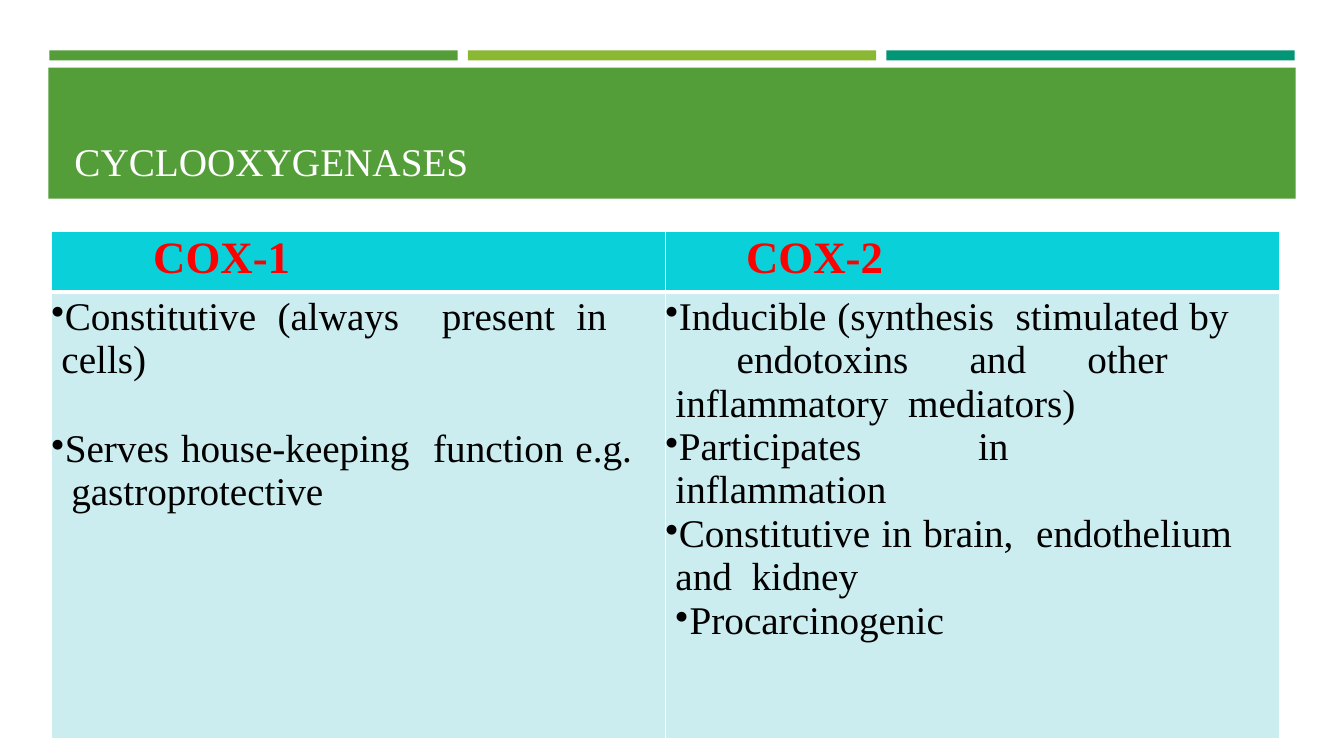
from lxml.etree import SubElement
from pptx import Presentation
from pptx.dml.color import RGBColor
from pptx.enum.shapes import MSO_SHAPE
from pptx.enum.text import MSO_ANCHOR, PP_ALIGN
from pptx.oxml.ns import qn
from pptx.util import Inches, Pt

FONT = "Times New Roman"
GREEN, LIME, TEAL, WHITE = "549E39", "8AB833", "029676", "FFFFFF"


def paint(color_owner, color):
    """Give a fill or a font a solid colour."""
    if hasattr(color_owner, "solid"):
        color_owner.solid()
        color_owner.fore_color.rgb = RGBColor.from_string(color)
    else:
        color_owner.color.rgb = RGBColor.from_string(color)


def style_paragraph(paragraph, text, size, color, bold=False):
    paragraph.text = text
    paragraph.font.name = FONT
    paragraph.font.size = Pt(size)
    paragraph.font.bold = bold
    paint(paragraph.font, color)


presentation = Presentation()
presentation.slide_width = Inches(13.33)
presentation.slide_height = Inches(7.5)
slide = presentation.slides.add_slide(presentation.slide_layouts[6])

# Three thin strips above the title band
bands = [(0.49 + 4.15 * i, 0.5, 4.05, 0.1, color)
         for i, color in enumerate((GREEN, LIME, TEAL))]
bands.append((0.48, 0.67, 12.37, 1.3, GREEN))
for left, top, width, height, color in bands:
    band = slide.shapes.add_shape(
        MSO_SHAPE.RECTANGLE, Inches(left), Inches(top), Inches(width), Inches(height))
    band.shadow.inherit = False
    band.line.fill.background()
    paint(band.fill, color)

title = slide.shapes.add_textbox(
    Inches(0.64), Inches(0.77), Inches(12.06), Inches(1.11)).text_frame
title.word_wrap = True
title.vertical_anchor = MSO_ANCHOR.BOTTOM
style_paragraph(title.paragraphs[0], "CYCLOOXYGENASES", 28, WHITE)

# Heading, its left margin, then points as
# (text, left margin, hanging indent, right margin, space before)
enzymes = [
    ("COX-1", 1.01, [
        ("Constitutive (always  present in cells)", 0.1, -0.1, 0.58, 1.9),
        ("Serves house-keeping  function e.g.  gastroprotective", 0.1, -0.1, 0.33, 32.5),
    ]),
    ("COX-2", 0.8, [
        ("Inducible (synthesis  stimulated by  endotoxins and other  "
         "inflammatory  mediators)", 0.1, -0.1, 0.5, 1.9),
        ("Participates in  inflammation", 0.1, -0.1, 1.53, 0.1),
        ("Constitutive in brain,  endothelium and  kidney", 0.1, -0.1, 0.47, 0.1),
        ("Procarcinogenic", 0.24, -0.14, 0, 0.1),
    ]),
]

comparison = slide.shapes.add_table(
    2, 2, Inches(0.51), Inches(2.3), Inches(12.18), Inches(5.03)).table
comparison.first_row = comparison.horz_banding = False
comparison.rows[0].height = Inches(0.6)
comparison.rows[1].height = Inches(4.43)

for column, (heading, heading_margin, points) in enumerate(enzymes):
    comparison.columns[column].width = Inches(6.09)

    heading_cell = comparison.cell(0, column)
    heading_line = heading_cell.text_frame.paragraphs[0]
    style_paragraph(heading_line, heading, 32, "FF0000", bold=True)
    heading_line.alignment = PP_ALIGN.JUSTIFY
    heading_line.space_before = Pt(1.6)
    heading_line._p.get_or_add_pPr().set("marL", str(Inches(heading_margin)))

    points_cell = comparison.cell(1, column)
    for i, (text, margin, hanging, right_margin, before) in enumerate(points):
        frame = points_cell.text_frame
        point = frame.add_paragraph() if i else frame.paragraphs[0]
        style_paragraph(point, text, 28, "000000")
        point.alignment = PP_ALIGN.JUSTIFY
        point.space_before = Pt(before)
        properties = point._p.get_or_add_pPr()
        for name, inches in (("marL", margin), ("marR", right_margin), ("indent", hanging)):
            properties.set(name, str(Inches(inches)))
        # Bullet elements stand between the spacing and the default font
        default_font = properties.find(qn("a:defRPr"))
        bullet_size = SubElement(properties, qn("a:buSzPct"), val="96000")
        bullet = SubElement(properties, qn("a:buChar"), char="•")
        default_font.addprevious(bullet_size)
        default_font.addprevious(bullet)

    for cell, fill, top_inset, top_line, bottom_line in (
            (heading_cell, "0AD0D9", 0.02, 1, 3),
            (points_cell, "CCEDF0", 0.03, 3, 1)):
        cell.margin_left = cell.margin_right = cell.margin_bottom = 0
        cell.margin_top = Inches(top_inset)
        paint(cell.fill, fill)
        cell_properties = cell._tc.get_or_add_tcPr()
        borders = (("a:lnL", 1), ("a:lnR", 1), ("a:lnT", top_line), ("a:lnB", bottom_line))
        for position, (side, width) in enumerate(borders):
            border = SubElement(cell_properties, qn(side), w=str(Pt(width)))
            SubElement(SubElement(border, qn("a:solidFill")), qn("a:srgbClr"), val=WHITE)
            cell_properties.insert(position, border)

presentation.save("out.pptx")
